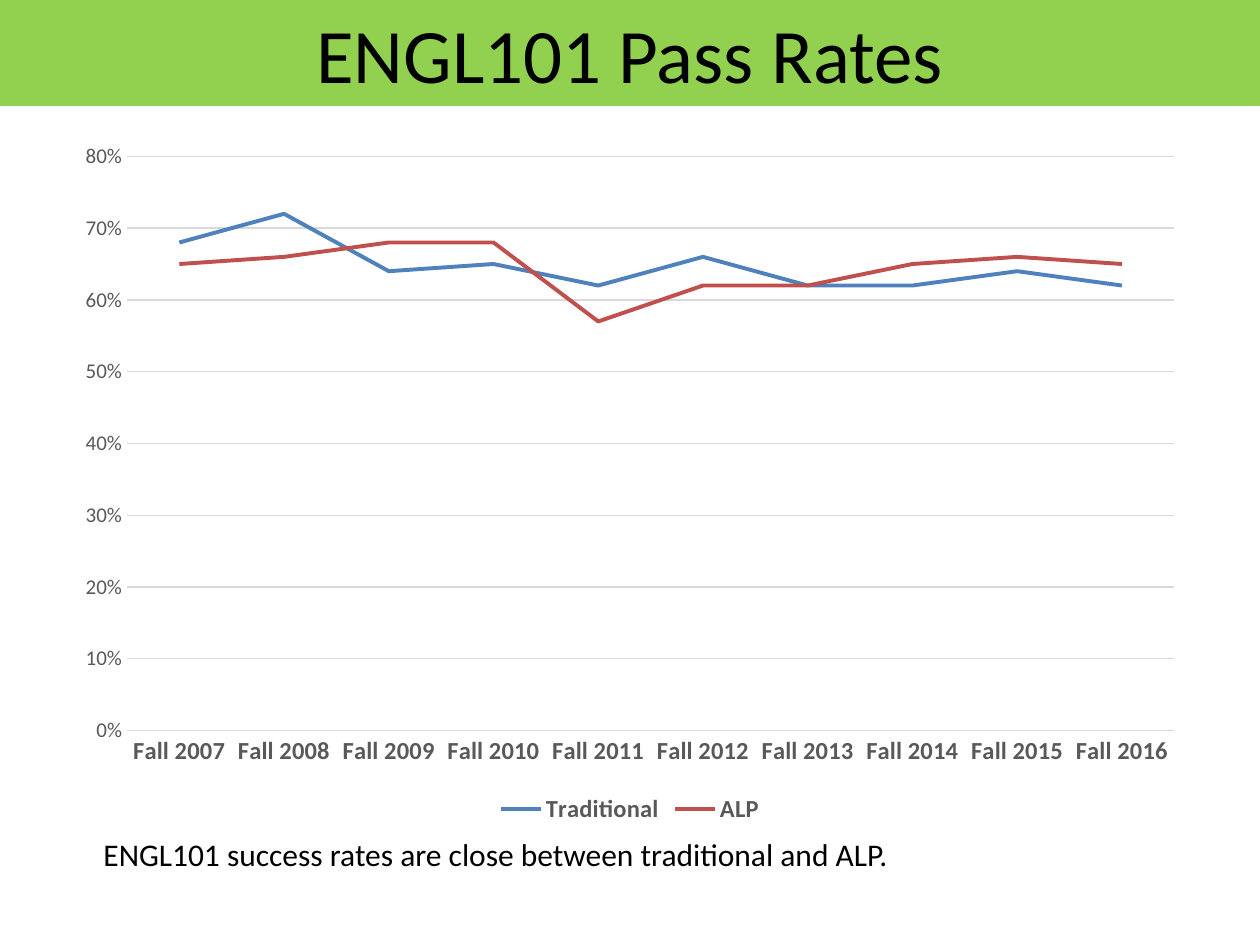
from dataclasses import dataclass

from pptx import Presentation
from pptx.chart.data import CategoryChartData
from pptx.dml.color import RGBColor
from pptx.enum.chart import XL_CHART_TYPE, XL_LEGEND_POSITION, XL_MARKER_STYLE, XL_TICK_MARK
from pptx.enum.shapes import MSO_SHAPE
from pptx.enum.text import MSO_ANCHOR, MSO_AUTO_SIZE, PP_ALIGN
from pptx.util import Emu, Pt

PX_PER_INCH = 126
FONT = "Calibri"
BLACK = RGBColor(0x00, 0x00, 0x00)
GREEN = RGBColor(0x92, 0xD0, 0x50)
GRAY = RGBColor(0x59, 0x59, 0x59)
LIGHT_GRAY = RGBColor(0xD9, 0xD9, 0xD9)
BLUE = RGBColor(0x4F, 0x81, 0xBD)
RED = RGBColor(0xC0, 0x50, 0x4D)


@dataclass(frozen=True)
class RateSeries:
    name: str
    percents: tuple[int, ...]
    color: RGBColor


TERMS = [f"Fall {year}" for year in range(2007, 2017)]
RATES = [
    RateSeries("Traditional", (68, 72, 64, 65, 62, 66, 62, 62, 64, 62), BLUE),
    RateSeries("ALP", (65, 66, 68, 68, 57, 62, 62, 65, 66, 65), RED),
]


def px(length: int) -> Emu:
    return Emu(round(length * 914400 / PX_PER_INCH))


def box(*lengths: int) -> list[Emu]:
    return [px(length) for length in lengths]


def format_font(font, size: int, color: RGBColor, bold: bool = False) -> None:
    font.name = FONT
    font.size = Pt(size)
    font.bold = bold
    font.color.rgb = color


def write_text(shape, text: str, *, size: int, color: RGBColor = BLACK,
               align=PP_ALIGN.LEFT, anchor=MSO_ANCHOR.TOP) -> None:
    frame = shape.text_frame
    frame.word_wrap = True
    frame.vertical_anchor = anchor
    paragraph = frame.paragraphs[0]
    paragraph.alignment = align
    run = paragraph.add_run()
    run.text = text
    format_font(run.font, size, color)


def format_line(line, color: RGBColor, width: float) -> None:
    line.color.rgb = color
    line.width = Pt(width)


def add_rate_chart(slide, rates: list[RateSeries]) -> None:
    data = CategoryChartData(number_format="0%")
    data.categories = TERMS
    for rate in rates:
        data.add_series(rate.name, [percent / 100 for percent in rate.percents])
    chart = slide.shapes.add_chart(
        XL_CHART_TYPE.LINE, *box(63, 130, 1134, 699), data).chart
    chart.has_title = False
    format_font(chart.font, 10, BLACK)

    # Series
    plot = chart.plots[0]
    plot.vary_by_categories = False
    for series, rate in zip(plot.series, rates):
        series.smooth = False
        series.marker.style = XL_MARKER_STYLE.NONE
        format_line(series.format.line, rate.color, 2.25)

    # Axes
    category_axis, value_axis = chart.category_axis, chart.value_axis
    for axis in (category_axis, value_axis):
        axis.major_tick_mark = axis.minor_tick_mark = XL_TICK_MARK.NONE
    format_font(category_axis.tick_labels.font, 14, GRAY, bold=True)
    format_line(category_axis.format.line, LIGHT_GRAY, 0.75)
    format_font(value_axis.tick_labels.font, 12, GRAY)
    value_axis.tick_labels.number_format = "0%"
    value_axis.tick_labels.number_format_is_linked = False
    value_axis.minimum_scale, value_axis.maximum_scale = 0, 0.8
    value_axis.major_unit = 0.1
    value_axis.format.line.fill.background()
    value_axis.has_major_gridlines = True
    format_line(value_axis.major_gridlines.format.line, LIGHT_GRAY, 0.75)

    # Legend
    chart.has_legend = True
    chart.legend.position = XL_LEGEND_POSITION.BOTTOM
    chart.legend.include_in_layout = False
    format_font(chart.legend.font, 14, GRAY, bold=True)


def main() -> None:
    presentation = Presentation()
    presentation.slide_width, presentation.slide_height = box(1260, 945)
    slide = presentation.slides.add_slide(presentation.slide_layouts[6])

    # Title band
    band = slide.shapes.add_shape(MSO_SHAPE.RECTANGLE, *box(0, 0, 1260, 106))
    band.shadow.inherit = False
    band.fill.solid()
    band.fill.fore_color.rgb = GREEN
    band.line.fill.background()
    write_text(band, "ENGL101 Pass Rates", size=44,
               align=PP_ALIGN.CENTER, anchor=MSO_ANCHOR.MIDDLE)

    # Pass rate chart
    add_rate_chart(slide, RATES)

    # Conclusion
    conclusion = slide.shapes.add_textbox(*box(91, 829, 1118, 51))
    write_text(conclusion, "ENGL101 success rates are close between traditional and ALP.",
               size=18)
    conclusion.text_frame.auto_size = MSO_AUTO_SIZE.SHAPE_TO_FIT_TEXT

    presentation.save("out.pptx")


if __name__ == "__main__":
    main()
